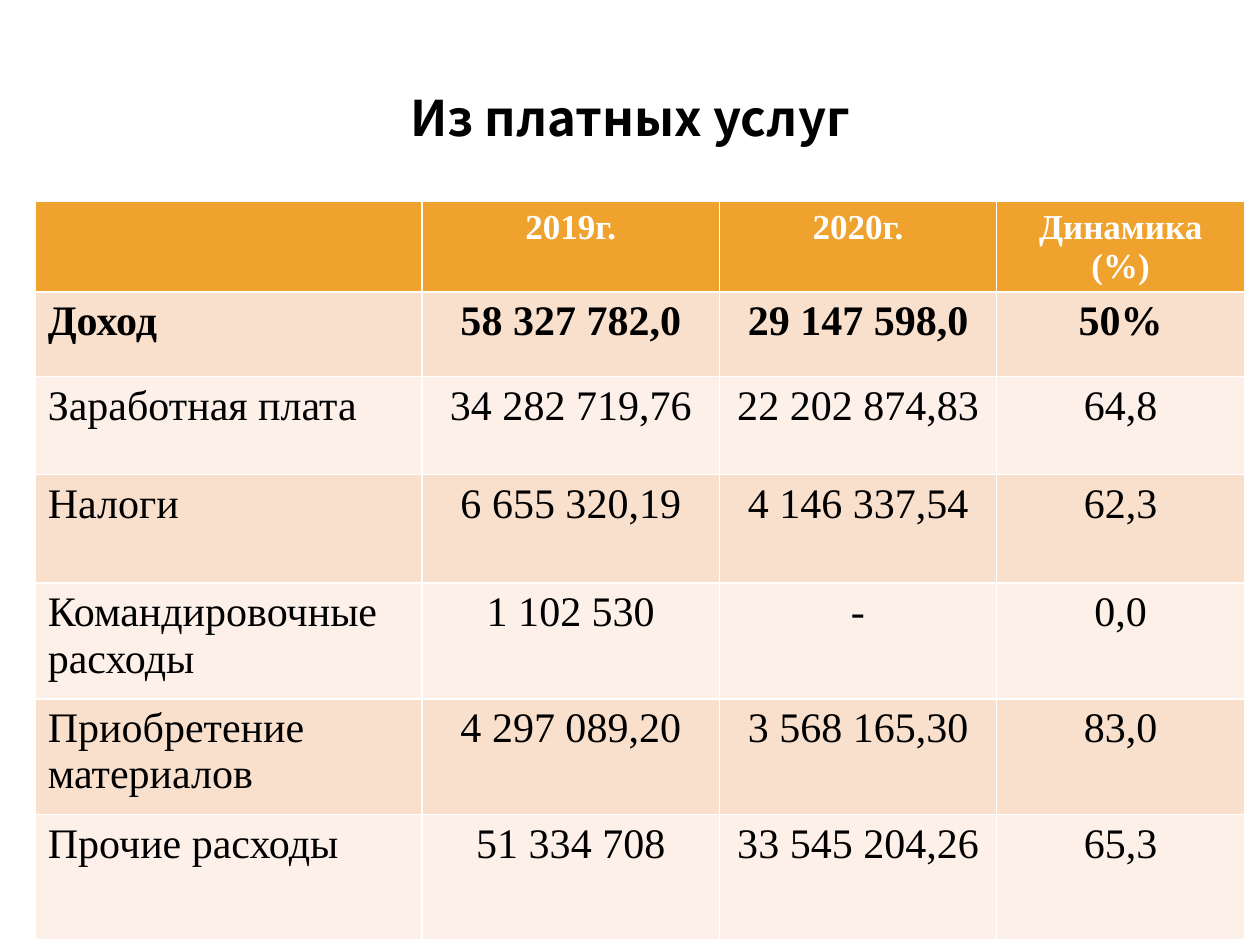
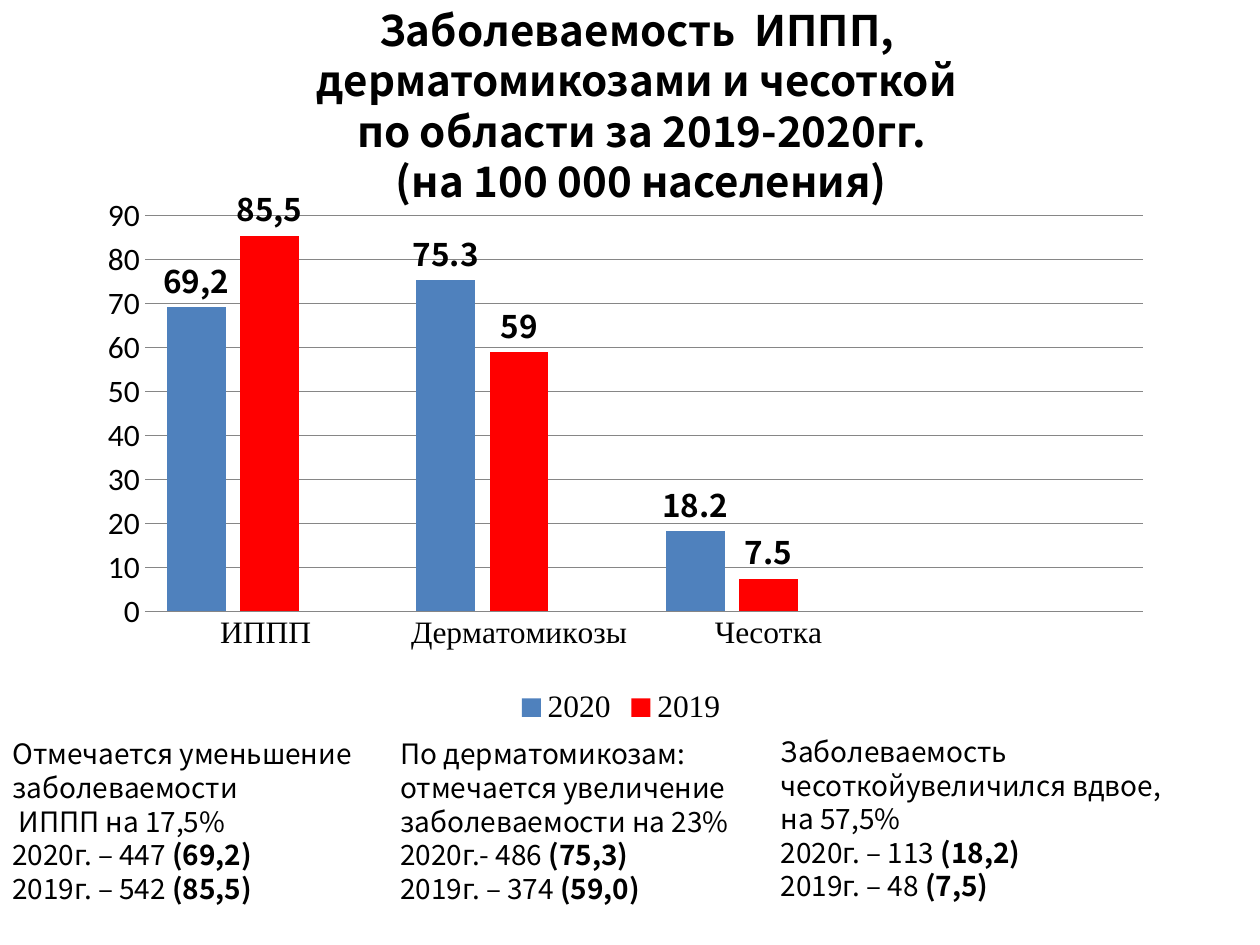
"""Build two slides: a table of paid-service income and a chart of disease incidence."""
from dataclasses import dataclass

from lxml.etree import SubElement
from pptx import Presentation
from pptx.chart.data import CategoryChartData
from pptx.dml.color import RGBColor
from pptx.enum.chart import XL_CHART_TYPE, XL_LABEL_POSITION, XL_LEGEND_POSITION, XL_TICK_MARK
from pptx.enum.text import MSO_ANCHOR, MSO_AUTO_SIZE, PP_ALIGN
from pptx.oxml import parse_xml
from pptx.oxml.ns import nsdecls, qn
from pptx.util import Inches, Pt


@dataclass(frozen=True)
class Theme:
    black: RGBColor = RGBColor.from_string("000000")
    white: RGBColor = RGBColor.from_string("FFFFFF")
    header: RGBColor = RGBColor.from_string("F0A22E")
    band_dark: RGBColor = RGBColor.from_string("F9E0CD")
    band_light: RGBColor = RGBColor.from_string("FCF0E8")
    grid: RGBColor = RGBColor.from_string("868686")
    blue: RGBColor = RGBColor.from_string("4F81BD")
    red: RGBColor = RGBColor.from_string("FF0000")
    green: RGBColor = RGBColor.from_string("9BBB59")
    sans: str = "Noto Sans CJK KR"
    serif: str = "Times New Roman"
    chart_font: str = "Calibri"
    title_size: int = 28
    long_title_size: int = 24
    header_size: int = 20
    cell_size: int = 24
    chart_size: int = 18
    note_size: int = 16


theme = Theme()


def add_text(para, text, size, font=theme.sans, color=theme.black, bold=False, align=None):
    """Append one formatted span, breaking lines at each newline."""
    if align is not None:
        para.alignment = align
    for index, line in enumerate(text.split("\n")):
        if index:
            para.add_line_break()
            SubElement(para._p[-1], qn("a:rPr"), sz=str(size * 100))
        span = para.add_run()
        span.text = line
        span.font.size = Pt(size)
        span.font.name = font
        span.font.bold = bold
        span.font.color.rgb = color


def add_page(deck, title, left, top, size):
    """Add a title-only page with its title placed and formatted."""
    page = deck.slides.add_slide(deck.slide_layouts[5])
    box = page.shapes.title
    box.left, box.top, box.width, box.height = Inches(left), Inches(top), Inches(9), Inches(1.25)
    frame = box.text_frame
    frame.auto_size = MSO_AUTO_SIZE.NONE
    frame.vertical_anchor = MSO_ANCHOR.MIDDLE
    add_text(frame.paragraphs[0], title, size, bold=True, align=PP_ALIGN.CENTER)
    return page


deck = Presentation()
deck.slide_width, deck.slide_height = Inches(10), Inches(7.5)

page = add_page(deck, "Из платных услуг", 0.5, 0.3, theme.title_size)
income_rows = [
    ("", "2019г.", "2020г.", "Динамика (%)"),
    ("Доход", "58 327 782,0", "29 147 598,0", "50%"),
    ("Заработная плата", "34 282 719,76", "22 202 874,83", "64,8"),
    ("Налоги", "6 655 320,19", "4 146 337,54", "62,3"),
    ("Командировочные расходы", "1 102 530", "-", "0,0"),
    ("Приобретение материалов", "4 297 089,20", "3 568 165,30", "83,0"),
    ("Прочие расходы", "51 334 708", "33 545 204,26", "65,3"),
]
column_widths = [3.07, 2.36, 2.2, 1.97]
row_heights = [0.44, 0.67, 0.78, 0.86, 0.92, 0.92, 0.99]
table = page.shapes.add_table(
    len(income_rows), len(column_widths),
    Inches(0.28), Inches(1.6), Inches(sum(column_widths)), Inches(sum(row_heights)),
).table
for column, width in zip(table.columns, column_widths):
    column.width = Inches(width)
for row_index, (values, height) in enumerate(zip(income_rows, row_heights)):
    table.rows[row_index].height = Inches(height)
    is_header = row_index == 0
    band = theme.band_dark if row_index % 2 else theme.band_light
    for column_index, value in enumerate(values):
        cell = table.cell(row_index, column_index)
        cell.fill.solid()
        cell.fill.fore_color.rgb = theme.header if is_header else band
        if value:
            add_text(
                cell.text_frame.paragraphs[0], value,
                theme.header_size if is_header else theme.cell_size,
                font=theme.serif,
                color=theme.white if is_header else theme.black,
                bold=row_index < 2,
                align=PP_ALIGN.CENTER if column_index else PP_ALIGN.LEFT,
            )

incidence_title = (
    "Заболеваемость  ИППП, \nдерматомикозами и чесоткой \n"
    "по области за 2019-2020гг.\n(на 100 000 населения)"
)
page = add_page(deck, incidence_title, 0.59, 0.21, theme.long_title_size)
incidence = [
    ("2020", (69.2, 75.3, 18.2, None), theme.blue, "69,2"),
    ("2019", (85.5, 59, 7.5, None), theme.red, "85,5"),
    ("Series 3", (None,) * 4, theme.green, None),
]
chart_data = CategoryChartData()
chart_data.categories = ["ИППП ", "Дерматомикозы", "Чесотка", ""]
for name, values, color, first_label in incidence:
    chart_data.add_series(name, values)
chart = page.shapes.add_chart(
    XL_CHART_TYPE.COLUMN_CLUSTERED,
    Inches(0.43), Inches(1.47), Inches(9), Inches(4.33), chart_data,
).chart
chart.has_title = False
chart.font.size = Pt(theme.chart_size)
chart.font.name = theme.chart_font
chart.font.color.rgb = theme.black

plot = chart.plots[0]
plot.gap_width, plot.overlap = 75, -25
plot.vary_by_categories = False
for series, (name, values, color, first_label) in zip(plot.series, incidence):
    series.format.fill.solid()
    series.format.fill.fore_color.rgb = color
    if first_label:
        labels = series.data_labels
        labels.show_value = True
        labels.position = XL_LABEL_POSITION.OUTSIDE_END
        labels.font.size = Pt(theme.chart_size)
        labels.font.name = theme.sans
        labels.font.bold = True
        labels.font.color.rgb = theme.black
        label = series.points[0].data_label
        add_text(label.text_frame.paragraphs[0], first_label, theme.chart_size, bold=True)
        label.position = XL_LABEL_POSITION.OUTSIDE_END

category_axis, value_axis = chart.category_axis, chart.value_axis
for axis in (category_axis, value_axis):
    axis.major_tick_mark = axis.minor_tick_mark = XL_TICK_MARK.NONE
category_axis.format.line.color.rgb = theme.grid
value_axis.format.line.fill.background()
value_axis.minimum_scale, value_axis.maximum_scale, value_axis.major_unit = 0, 90, 10
value_axis.has_major_gridlines = True
value_axis.major_gridlines.format.line.color.rgb = theme.grid
value_axis.major_gridlines.format.line.width = Pt(0.75)

chart.has_legend = True
legend = chart.legend
legend.position = XL_LEGEND_POSITION.BOTTOM
legend.include_in_layout = False
for font in (category_axis.tick_labels.font, legend.font):
    font.name = theme.serif
    font.size = Pt(theme.chart_size)
    font.color.rgb = theme.black
hidden_entry = f'<c:legendEntry {nsdecls("c")}><c:idx val="2"/><c:delete val="1"/></c:legendEntry>'
legend._element.insert(1, parse_xml(hidden_entry))

plot_area = chart._chartSpace.chart.plotArea
for old_layout in plot_area.findall(qn("c:layout")):
    plot_area.remove(old_layout)
layout = parse_xml(f'<c:layout {nsdecls("c")}/>')
manual = SubElement(layout, qn("c:manualLayout"))
for tag, value in (
    ("layoutTarget", "inner"), ("xMode", "edge"), ("yMode", "edge"),
    ("x", "0.08"), ("y", "0.045"), ("w", "0.88"), ("h", "0.734"),
):
    SubElement(manual, qn(f"c:{tag}"), val=value)
plot_area.insert(0, layout)

notes = [
    (0, 5.8, 3.11, [
        ("Отмечается уменьшение заболеваемости", ""),
        (" ИППП на 17,5%", ""),
        ("2020г. – 447 ", "(69,2)"),
        ("2019г. – 542 ", "(85,5)"),
    ]),
    (3.08, 5.8, 2.99, [
        ("По дерматомикозам: отмечается увеличение заболеваемости на 23%", ""),
        ("2020г.- 486 ", "(75,3)"),
        ("2019г. – 374 ", "(59,0)"),
    ]),
    (6.1, 5.78, 3.46, [
        ("Заболеваемость чесоткойувеличился вдвое, на 57,5%", ""),
        ("2020г. – 113 ", "(18,2)"),
        ("2019г. – 48 ", "(7,5)"),
    ]),
]
for left, top, width, lines in notes:
    box = page.shapes.add_textbox(Inches(left), Inches(top), Inches(width), Inches(1.45))
    frame = box.text_frame
    frame.word_wrap = True
    frame.auto_size = MSO_AUTO_SIZE.SHAPE_TO_FIT_TEXT
    for index, (plain, rate) in enumerate(lines):
        para = frame.add_paragraph() if index else frame.paragraphs[0]
        add_text(para, plain, theme.note_size)
        if rate:
            add_text(para, rate, theme.note_size, bold=True)

deck.save("out.pptx")
